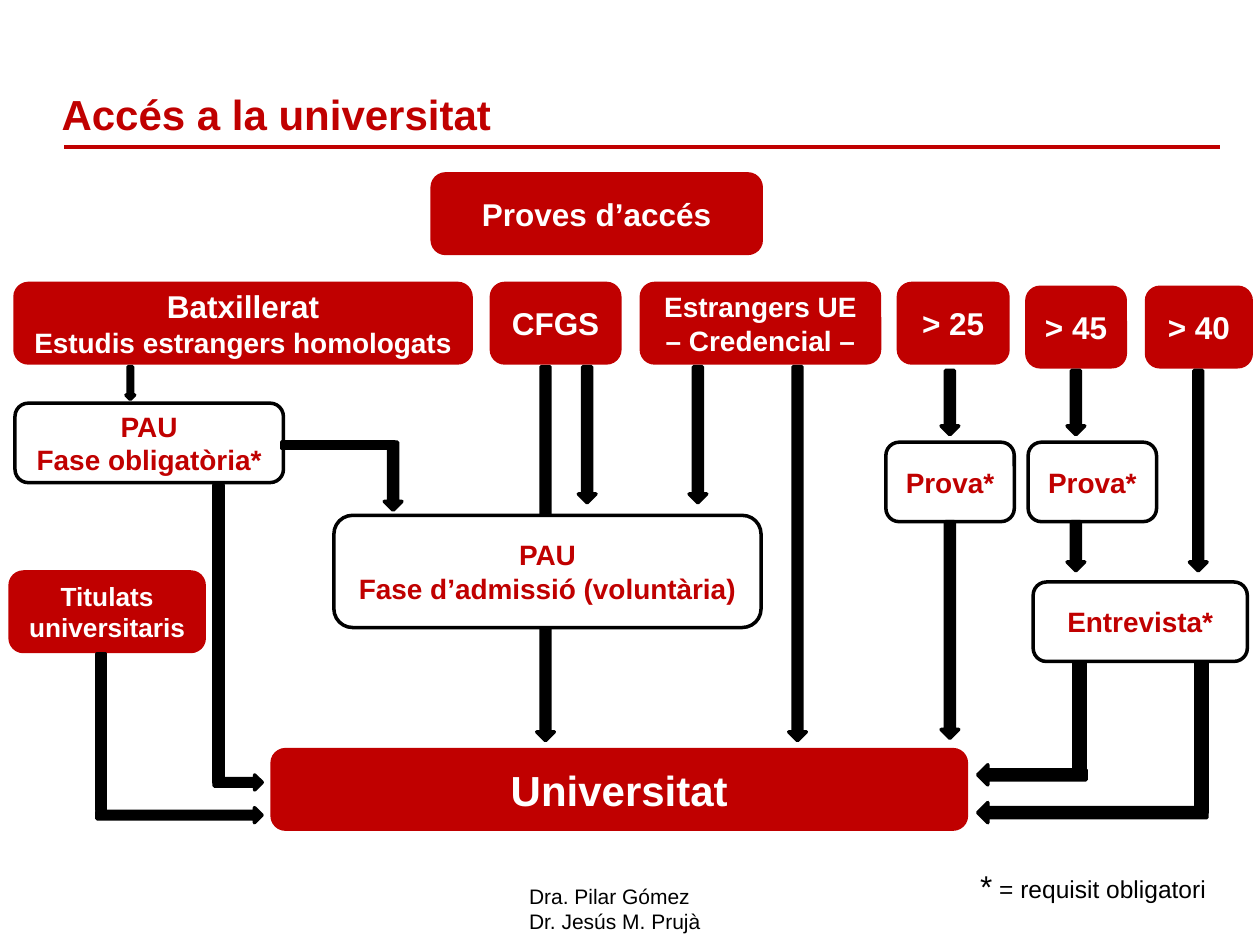
from dataclasses import dataclass
from typing import Optional

import pptx
import pptx.dml.color
import pptx.enum.shapes
import pptx.enum.text
import pptx.oxml.ns
import pptx.util
from lxml import etree

Pt = pptx.util.Pt
Kind = pptx.enum.shapes.MSO_SHAPE
Align = pptx.enum.text.PP_ALIGN
Anchor = pptx.enum.text.MSO_ANCHOR


def tint(code: str) -> pptx.dml.color.RGBColor:
    return pptx.dml.color.RGBColor.from_string(code)


@dataclass(frozen=True)
class Theme:
    font: str = "Arial"
    red: str = "C00000"
    white: str = "FFFFFF"
    black: str = "000000"
    head: float = 24
    large: float = 18
    mid: float = 16
    small: float = 15
    note: float = 14
    foot: float = 12
    edge: float = 2
    rule: float = 2.25


T = Theme()


@dataclass(frozen=True)
class Run:
    text: str
    size: float


@dataclass(frozen=True)
class Box:
    left: float
    top: float
    width: float
    lines: tuple[Run, ...]
    solid: bool = True
    fill: Optional[str] = None
    height: float = 45.4


@dataclass(frozen=True)
class Bar:
    kind: Kind
    left: float
    top: float
    width: float
    height: float
    turn: float = 0


def down(left: float, top: float, height: float, width: float = 10.1) -> Bar:
    return Bar(Kind.DOWN_ARROW, left, top, width, height)


def write(frame, lines: list[tuple[Run, ...]], color: str,
          bold: bool = False, align=Align.LEFT) -> None:
    for i, runs in enumerate(lines):
        para = frame.paragraphs[0] if i == 0 else frame.add_paragraph()
        para.alignment = align
        for item in runs:
            run = para.add_run()
            run.text = item.text
            run.font.name = T.font
            run.font.size = Pt(item.size)
            run.font.bold = bold
            run.font.color.rgb = tint(color)


def shape(slide, kind: Kind, place: tuple[float, ...],
          fill: Optional[str], edge: str):
    item = slide.shapes.add_shape(kind, *map(Pt, place))
    item.shadow.inherit = False
    if fill:
        item.fill.solid()
        item.fill.fore_color.rgb = tint(fill)
    else:
        item.fill.background()
    item.line.color.rgb = tint(edge)
    item.line.width = Pt(T.edge)
    return item


def draw_box(slide, box: Box) -> None:
    fill, edge, ink = ((T.red, T.red, T.white) if box.solid
                       else (box.fill, T.black, T.red))
    place = (box.left, box.top, box.width, box.height)
    item = shape(slide, Kind.ROUNDED_RECTANGLE, place, fill, edge)
    frame = item.text_frame
    frame.word_wrap = True
    frame.vertical_anchor = Anchor.MIDDLE
    write(frame, [(run,) for run in box.lines], ink, True, Align.CENTER)


def draw_bar(slide, bar: Bar) -> None:
    place = (bar.left, bar.top, bar.width, bar.height)
    shape(slide, bar.kind, place, T.black, T.black).rotation = bar.turn


def label(slide, place: tuple[float, ...], lines: list[tuple[Run, ...]],
          color: str, bold: bool = False, wrap: bool = True,
          anchor=Anchor.TOP) -> None:
    frame = slide.shapes.add_textbox(*map(Pt, place)).text_frame
    frame.word_wrap = wrap
    frame.vertical_anchor = anchor
    write(frame, lines, color, bold)


def draw_rule(slide, left: float, right: float, top: float) -> None:
    line = slide.shapes.add_connector(
        pptx.enum.shapes.MSO_CONNECTOR.STRAIGHT, *map(Pt, (left, top, right, top)))
    line.line.color.rgb = tint(T.red)
    line.line.width = Pt(T.rule)
    props = line._element.spPr
    etree.SubElement(props, pptx.oxml.ns.qn("a:effectLst"))


# Routes into university
ROW = 162
AGE = 164.2
TEST = 252.7
BOXES = [
    Box(247, 99.4, 188, (Run("Proves d’accés", T.large),)),
    Box(8.6, ROW, 260.6, (Run("Batxillerat", T.large),
                          Run("Estudis estrangers homologats", T.mid))),
    Box(280.8, ROW, 73.4, (Run("CFGS", T.large),)),
    Box(366.5, ROW, 136.1, (Run("Estrangers UE – Credencial –", T.mid),)),
    Box(513.4, ROW, 62.6, (Run("> 25", T.large),)),
    Box(586.8, AGE, 56.2, (Run("> 45", T.large),)),
    Box(655.2, AGE, 59.8, (Run("> 40", T.large),)),
    Box(8.6, 230.4, 153.4, (Run("PAU", T.mid),
                            Run("Fase obligatòria*", T.mid)), False),
    Box(506.2, TEST, 73.4, (Run("Prova*", T.mid),), False),
    Box(587.5, TEST, 73.4, (Run("Prova*", T.mid),), False),
    Box(590.4, 332.6, 122.4, (Run("Entrevista*", T.mid),), False),
    Box(190.8, 294.5, 244.1, (Run("PAU", T.mid),
                              Run("Fase d’admissió (voluntària)", T.mid)),
        False, T.white, 64.1),
    Box(5.8, 326.9, 110.9, (Run("Titulats universitaris", T.small),)),
    Box(155.5, 428.4, 396.7, (Run("Universitat", T.head),)),
]

# Passes behind the admission phase box
STEM = down(306.7, 209.5, 213.8)

BARS = [
    # Straight arrows
    down(72, 209.5, 18.7, 5),
    down(330.5, 209.5, 77.8),
    down(393.8, 209.5, 77.8),
    down(450.7, 209.5, 213.8),
    down(537.8, 211.7, 36.7),
    down(609.8, 211.7, 36.7),
    down(679.7, 211.7, 114.5),
    down(537.8, 298.1, 123.8),
    down(609.8, 298.1, 28.1),
    # Compulsory phase to admission phase
    Bar(Kind.RECTANGLE, 161.3, 252.7, 64.1, 3.6),
    down(219.6, 252.7, 38.9),
    # Compulsory phase to university
    Bar(Kind.RECTANGLE, 122.4, 277.2, 5, 169.9),
    Bar(Kind.RIGHT_ARROW, 122.4, 442.8, 27.4, 8.6),
    # Graduates to university
    Bar(Kind.RECTANGLE, 55.4, 373.7, 5, 89.3),
    Bar(Kind.RIGHT_ARROW, 55.4, 461.5, 94.3, 8.6),
    # Interview to university
    Bar(Kind.RECTANGLE, 613.4, 378.7, 6.5, 61.2),
    Bar(Kind.RIGHT_ARROW, 558.7, 437, 61.9, 11.5, 180),
    Bar(Kind.RECTANGLE, 683.3, 378.7, 6.5, 85.7),
    Bar(Kind.RIGHT_ARROW, 558.7, 458.6, 131, 11.5, 180),
]


def main() -> None:
    deck = pptx.Presentation()
    deck.slide_width, deck.slide_height = Pt(720), Pt(540)
    slide = deck.slides.add_slide(deck.slide_layouts[6])

    # Heading and credits
    draw_rule(slide, 36.7, 697, 84.2)
    label(slide, (28.1, 45.4, 674.6, 39.6),
          [(Run("Accés a la universitat", T.head),)], T.red, True,
          anchor=Anchor.MIDDLE)
    label(slide, (295.2, 501.1, 113.8, 36),
          [(Run("Dra. Pilar Gómez", T.foot),),
           (Run("Dr. Jesús M. Prujà", T.foot),)], T.black, wrap=False)

    # Flow chart
    draw_bar(slide, STEM)
    for box in BOXES:
        draw_box(slide, box)
    for bar in BARS:
        draw_bar(slide, bar)

    # Key
    label(slide, (553, 491.8, 145.4, 28.8),
          [(Run("*", T.large), Run(" = requisit obligatori", T.note))], T.black)

    deck.save("out.pptx")


if __name__ == "__main__":
    main()
